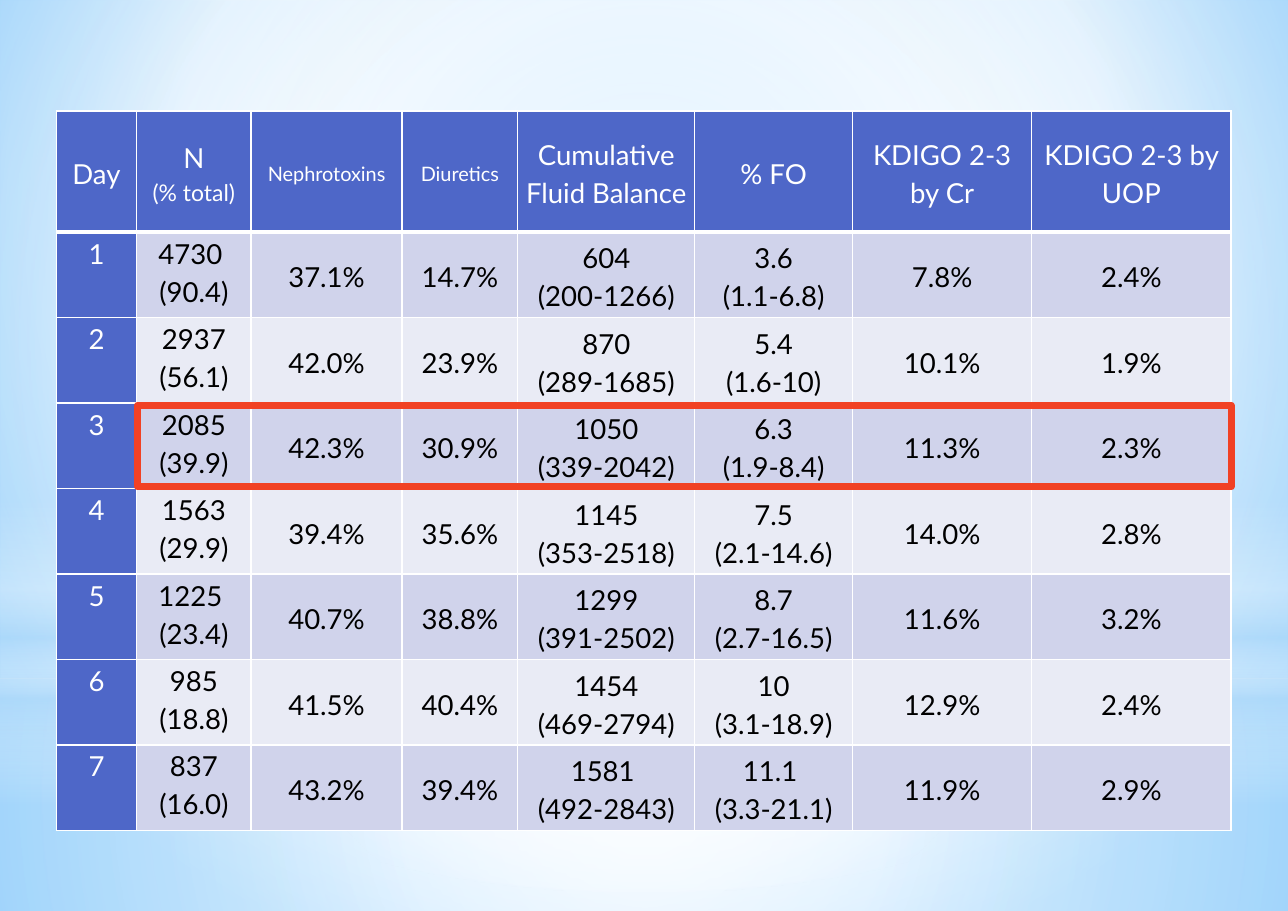
from lxml.etree import SubElement
from pptx import Presentation
from pptx.dml.color import RGBColor
from pptx.enum.shapes import MSO_SHAPE
from pptx.enum.text import MSO_ANCHOR, PP_ALIGN
from pptx.oxml import parse_xml
from pptx.oxml.ns import nsdecls, qn
from pptx.util import Cm, Pt

WHITE = RGBColor(0xFF, 0xFF, 0xFF)
BLACK = RGBColor(0x00, 0x00, 0x00)
HEADER_BLUE = RGBColor(0x4E, 0x67, 0xC8)
BAND_DARK = RGBColor(0xD0, 0xD3, 0xEB)
BAND_LIGHT = RGBColor(0xE9, 0xEB, 0xF5)
HIGHLIGHT_RED = RGBColor(0xF1, 0x41, 0x24)
SKY = RGBColor(0x9E, 0xD5, 0xFF)
DEEP_SKY = RGBColor(0x5B, 0xB9, 0xFF)
PALE_BLUE = RGBColor(0xB4, 0xDC, 0xFA)

FONT = "Lato"
BODY_SIZE = 18
SLIDE_WIDTH, SLIDE_HEIGHT = 29.7, 21
TABLE_LEFT, TABLE_TOP = 1.3, 2.56
COLUMN_WIDTHS = [1.85, 2.64, 3.48, 2.67, 4.08, 3.64, 4.13, 4.6]
HEADER_HEIGHT, ROW_HEIGHT = 2.79, 1.97

CIRCLE = '<a:path path="circle"><a:fillToRect l="{}000" t="{}000" r="{}000" b="{}000"/></a:path>'
CENTRED = CIRCLE.format(50, 50, 50, 50)
DOWNWARD = '<a:lin ang="5400000" scaled="0"/>'

GLOWS = [
    (MSO_SHAPE.RECTANGLE, 15.65, 5.35, CENTRED,
     [(0, WHITE, 91), (37, WHITE, 76), (100, PALE_BLUE, 79)]),
    (MSO_SHAPE.RECTANGLE, 0, 15.65, CENTRED,
     [(0, WHITE, 89), (48, WHITE, 62), (100, PALE_BLUE, 79)]),
    (MSO_SHAPE.RECTANGLE, 11.53, 7.01, DOWNWARD,
     [(0, WHITE, 0), (29, WHITE, 30), (45, PALE_BLUE, 40),
      (55, WHITE, 26), (65, PALE_BLUE, 60), (100, WHITE, 0)]),
    (MSO_SHAPE.OVAL, 4.9, 15.65, CENTRED,
     [(0, WHITE, 100), (56, WHITE, 0)]),
]

HEADERS = [
    [("Day", 18)],
    [("N", 18), ("(% total)", 15)],
    [("Nephrotoxins", 13)],
    [("Diuretics", 13)],
    [("Cumulative Fluid Balance", 18)],
    [("% FO", 18)],
    [("KDIGO 2-3 by Cr", 18)],
    [("KDIGO 2-3 by UOP", 18)],
]

DAYS = [
    ("1", "4730 |(90.4)", "37.1%", "14.7%", "604|(200-1266)", "3.6|(1.1-6.8)", "7.8%", "2.4%"),
    ("2", "2937|(56.1)", "42.0%", "23.9%", "870|(289-1685)", "5.4|(1.6-10)", "10.1%", "1.9%"),
    ("3", "2085|(39.9)", "42.3%", "30.9%", "1050|(339-2042)", "6.3|(1.9-8.4)", "11.3%", "2.3%"),
    ("4", "1563|(29.9)", "39.4%", "35.6%", "1145|(353-2518)", "7.5|(2.1-14.6)", "14.0%", "2.8%"),
    ("5", "1225 |(23.4)", "40.7%", "38.8%", "1299|(391-2502)", "8.7|(2.7-16.5)", "11.6%", "3.2%"),
    ("6", "985|(18.8)", "41.5%", "40.4%", "1454|(469-2794)", "10|(3.1-18.9)", "12.9%", "2.4%"),
    ("7", "837|(16.0)", "43.2%", "39.4%", "1581 |(492-2843)", "11.1 |(3.3-21.1)", "11.9%", "2.9%"),
]


def swap_in_gradient(holder, stops, direction):
    stop_list = "".join(
        f'<a:gs pos="{position}000"><a:srgbClr val="{color}">'
        f'<a:alpha val="{opacity}000"/></a:srgbClr></a:gs>'
        for position, color, opacity in stops
    )
    gradient = parse_xml(
        f'<a:gradFill {nsdecls("a")} rotWithShape="1">'
        f'<a:gsLst>{stop_list}</a:gsLst>{direction}</a:gradFill>'
    )
    holder.replace(holder.find(qn("a:solidFill")), gradient)


def paint_background(page):
    page.background.fill.solid()
    stops = [(0, SKY, 100), (60, WHITE, 100), (100, DEEP_SKY, 100)]
    holder = page.element.find(".//" + qn("p:bgPr"))
    swap_in_gradient(holder, stops, CIRCLE.format(20, 10, 20, 60))


def add_glow(page, kind, top, height, direction, stops):
    glow = page.shapes.add_shape(kind, 0, Cm(top), Cm(SLIDE_WIDTH), Cm(height))
    glow.shadow.inherit = False
    glow.line.fill.background()
    glow.fill.solid()
    swap_in_gradient(glow.element.spPr, stops, direction)


def add_borders(cell, bottom_width):
    properties = cell._tc.get_or_add_tcPr()
    for side, width in (("L", 1), ("R", 1), ("T", 1), ("B", bottom_width)):
        border = SubElement(properties, qn(f"a:ln{side}"), w=str(Pt(width)))
        fill = SubElement(border, qn("a:solidFill"))
        SubElement(fill, qn("a:srgbClr"), val=str(WHITE))


def fill_cell(cell, lines, fill, color, anchor, bottom_width=1):
    add_borders(cell, bottom_width)
    cell.fill.solid()
    cell.fill.fore_color.rgb = fill
    cell.vertical_anchor = anchor
    cell.margin_left = cell.margin_right = Cm(0.18)
    cell.margin_top = cell.margin_bottom = 0
    frame = cell.text_frame
    for index, (text, size) in enumerate(lines):
        para = frame.add_paragraph() if index else frame.paragraphs[0]
        para.text = text
        para.alignment = PP_ALIGN.CENTER
        para.line_spacing = 1.15
        para.font.name = FONT
        para.font.size = Pt(size)
        para.font.color.rgb = color


def add_day_table(page):
    height = HEADER_HEIGHT + ROW_HEIGHT * len(DAYS)
    table = page.shapes.add_table(
        len(DAYS) + 1, len(HEADERS), Cm(TABLE_LEFT), Cm(TABLE_TOP),
        Cm(sum(COLUMN_WIDTHS)), Cm(height),
    ).table
    for column, width in zip(table.columns, COLUMN_WIDTHS):
        column.width = Cm(width)
    for row in table.rows:
        row.height = Cm(ROW_HEIGHT)
    table.rows[0].height = Cm(HEADER_HEIGHT)
    for column, lines in enumerate(HEADERS):
        fill_cell(table.cell(0, column), lines, HEADER_BLUE, WHITE, MSO_ANCHOR.MIDDLE, 3)
    for row, values in enumerate(DAYS, start=1):
        band = BAND_DARK if row % 2 else BAND_LIGHT
        for column, value in enumerate(values):
            lines = [(text, BODY_SIZE) for text in value.split("|")]
            fill, color = (band, BLACK) if column else (HEADER_BLUE, WHITE)
            anchor = MSO_ANCHOR.MIDDLE if column > 1 else MSO_ANCHOR.TOP
            fill_cell(table.cell(row, column), lines, fill, color, anchor)


def add_highlight(page):
    frame = page.shapes.add_shape(
        MSO_SHAPE.RECTANGLE, Cm(3.17), Cm(9.34), Cm(25.22), Cm(1.88)
    )
    frame.shadow.inherit = False
    frame.fill.background()
    frame.line.color.rgb = HIGHLIGHT_RED
    frame.line.width = Pt(4.5)


def main():
    deck = Presentation()
    deck.slide_width, deck.slide_height = Cm(SLIDE_WIDTH), Cm(SLIDE_HEIGHT)
    page = deck.slides.add_slide(deck.slide_layouts[6])
    paint_background(page)
    for glow in GLOWS:
        add_glow(page, *glow)
    add_day_table(page)
    add_highlight(page)
    deck.save("out.pptx")


if __name__ == "__main__":
    main()
